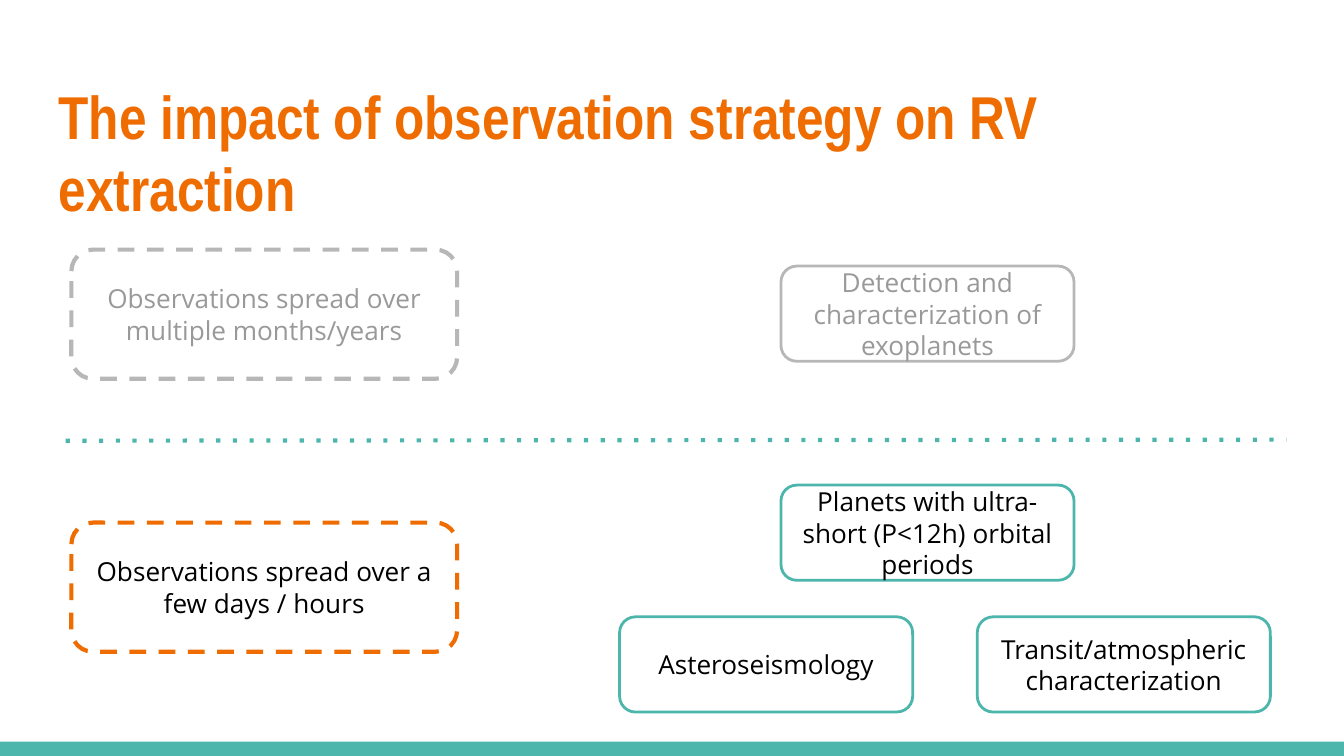
from dataclasses import dataclass

from pptx import Presentation
from pptx.dml.color import RGBColor
from pptx.enum.dml import MSO_LINE
from pptx.enum.shapes import MSO_CONNECTOR, MSO_SHAPE
from pptx.enum.text import MSO_ANCHOR, MSO_AUTO_SIZE, PP_ALIGN
from pptx.oxml.ns import qn
from pptx.oxml.xmlchemy import OxmlElement
from pptx.slide import Slide
from pptx.text.text import TextFrame
from pptx.util import Cm, Pt

RECTANGLE, ROUNDED = MSO_SHAPE.RECTANGLE, MSO_SHAPE.ROUNDED_RECTANGLE
STRAIGHT = MSO_CONNECTOR.STRAIGHT
DASH, ROUND_DOT = MSO_LINE.DASH, MSO_LINE.ROUND_DOT
TOP, MIDDLE = MSO_ANCHOR.TOP, MSO_ANCHOR.MIDDLE
LEFT, CENTER = PP_ALIGN.LEFT, PP_ALIGN.CENTER
TITLE_ONLY = 5
SLIDE_WIDTH, SLIDE_HEIGHT = 25.4, 14.29


@dataclass(frozen=True)
class Theme:
    orange: RGBColor = RGBColor(0xEF, 0x6C, 0x00)
    teal: RGBColor = RGBColor(0x4D, 0xB6, 0xAC)
    muted_line: RGBColor = RGBColor(0xB7, 0xB7, 0xB7)
    muted_text: RGBColor = RGBColor(0x99, 0x99, 0x99)
    black: RGBColor = RGBColor(0, 0, 0)
    title_font: str = "Arial Narrow"
    body_font: str = "Open Sans"
    title_size: float = 32.4
    body_size: float = 14
    thick: float = 2.25
    thin: float = 1.5


THEME = Theme()


@dataclass(frozen=True)
class BoxStyle:
    """Size in centimetres and outline shared by one kind of box."""
    width: float
    height: float
    line_width: float
    dashed: bool


STRATEGY = BoxStyle(7.29, 2.44, THEME.thick, True)
SCIENCE_CASE = BoxStyle(5.54, 1.8, THEME.thin, False)


@dataclass(frozen=True)
class Box:
    text: str
    left: float
    top: float
    style: BoxStyle
    line: RGBColor
    color: RGBColor = THEME.black


STRATEGY_LEFT, UPPER_CASE_LEFT, LOWER_CASE_TOP = 1.35, 14.76, 11.66
BOXES = [
    Box("Observations spread over multiple months/years", STRATEGY_LEFT, 4.72,
        STRATEGY, THEME.muted_line, THEME.muted_text),
    Box("Observations spread over a few days / hours", STRATEGY_LEFT, 9.88,
        STRATEGY, THEME.orange),
    Box("Planets with ultra-short (P<12h) orbital periods", UPPER_CASE_LEFT, 9.17,
        SCIENCE_CASE, THEME.teal),
    Box("Transit/atmospheric characterization", 18.47, LOWER_CASE_TOP,
        SCIENCE_CASE, THEME.teal),
    Box("Asteroseismology", 11.71, LOWER_CASE_TOP, SCIENCE_CASE, THEME.teal),
    Box("Detection and characterization of exoplanets", UPPER_CASE_LEFT, 5.03,
        SCIENCE_CASE, THEME.muted_line, THEME.muted_text),
]


def write_text(frame: TextFrame, text: str, font_name: str, size: float,
               color: RGBColor, align: PP_ALIGN, anchor: MSO_ANCHOR,
               bold: bool = False) -> None:
    frame.word_wrap = True
    frame.auto_size = MSO_AUTO_SIZE.NONE
    frame.vertical_anchor = anchor
    frame.margin_left = frame.margin_right = Cm(0.25)
    frame.margin_top = frame.margin_bottom = Cm(0.25)
    paragraph = frame.paragraphs[0]
    paragraph.alignment = align
    run = paragraph.add_run()
    run.text = text
    run.font.name = font_name
    run.font.size = Pt(size)
    run.font.bold = bold
    run.font.color.rgb = color


def add_title(slide: Slide, text: str) -> None:
    title = slide.shapes.title
    title.left, title.top = Cm(0.86), Cm(1.24)
    title.width, title.height = Cm(23.67), Cm(1.96)
    write_text(title.text_frame, text, THEME.title_font, THEME.title_size,
               THEME.orange, LEFT, TOP, bold=True)


def add_footer_bar(slide: Slide) -> None:
    top = 14.02
    bar = slide.shapes.add_shape(RECTANGLE, 0, Cm(top), Cm(SLIDE_WIDTH),
                                 Cm(SLIDE_HEIGHT - top))
    bar.shadow.inherit = False
    bar.fill.solid()
    bar.fill.fore_color.rgb = THEME.teal
    bar.line.fill.background()


def add_box(slide: Slide, box: Box) -> None:
    style = box.style
    shape = slide.shapes.add_shape(ROUNDED, Cm(box.left), Cm(box.top),
                                   Cm(style.width), Cm(style.height))
    shape.shadow.inherit = False
    shape.fill.background()
    shape.line.color.rgb = box.line
    shape.line.width = Pt(style.line_width)
    if style.dashed:
        shape.line.dash_style = DASH
    write_text(shape.text_frame, box.text, THEME.body_font, THEME.body_size,
               box.color, CENTER, MIDDLE)


def add_divider(slide: Slide) -> None:
    divider = slide.shapes.add_connector(STRAIGHT, Cm(1.24), Cm(8.33),
                                         Cm(24.31), Cm(8.31))
    divider.line.color.rgb = THEME.teal
    divider.line.width = Pt(THEME.thick)
    divider.line.dash_style = ROUND_DOT
    properties = divider._element.spPr
    # The wider "dot" pattern has no member in MSO_LINE.
    properties.find(".//" + qn("a:prstDash")).set("val", "dot")
    properties.append(OxmlElement("a:effectLst"))


def main() -> None:
    presentation = Presentation()
    presentation.slide_width = Cm(SLIDE_WIDTH)
    presentation.slide_height = Cm(SLIDE_HEIGHT)
    slide = presentation.slides.add_slide(presentation.slide_layouts[TITLE_ONLY])
    add_footer_bar(slide)
    add_title(slide, "The impact of observation strategy on RV extraction")
    for box in BOXES:
        add_box(slide, box)
    add_divider(slide)
    presentation.save("out.pptx")


if __name__ == "__main__":
    main()
